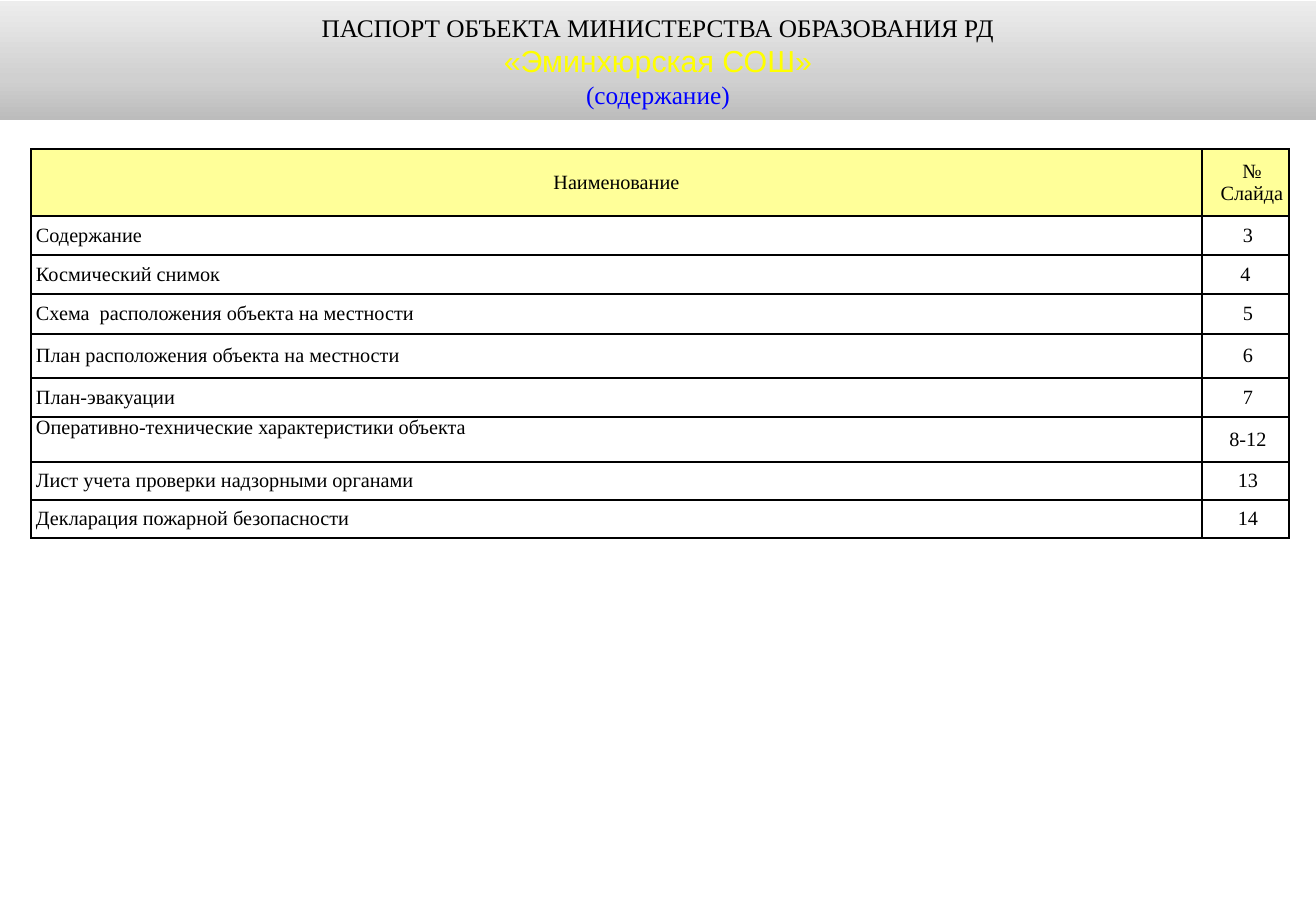
import copy

import lxml.etree
import pptx
import pptx.dml.color
import pptx.enum.text
import pptx.oxml.ns
import pptx.util

PX = 7526  # EMU in one px
SERIF = "Times New Roman"
ALIGN = pptx.enum.text.PP_ALIGN
ANCHOR = pptx.enum.text.MSO_ANCHOR
qn = pptx.oxml.ns.qn


def rgb(code):
    return pptx.dml.color.RGBColor.from_string(code)


def write(frame, text, size=12, font=SERIF, color="000000", align=ALIGN.CENTER):
    """Fill the empty first paragraph, or add one below."""
    para = frame.paragraphs[0] if not frame.text else frame.add_paragraph()
    para.alignment = align
    run = para.add_run()
    run.text = text
    run.font.size = pptx.util.Pt(size)
    run.font.name = font
    run.font.color.rgb = rgb(color)


deck = pptx.Presentation()
deck.slide_width = 1316 * PX
deck.slide_height = 911 * PX
slide = deck.slides.add_slide(deck.slide_layouts[5])

# Title band
title = slide.shapes.title
title.left, title.top = 0, 1 * PX
title.width, title.height = 1316 * PX, 119 * PX
title.fill.gradient()
title.fill.gradient_angle = 90
stops = title.element.spPr.find(".//" + qn("a:gsLst"))
stops.append(copy.deepcopy(stops[0]))
shades = [(0, "BCBCBC"), (0.35, "D0D0D0"), (1, "EDEDED")]
for stop, (place, shade) in zip(title.fill.gradient_stops, shades):
    stop.position = place
    stop.color.rgb = rgb(shade)

frame = title.text_frame
frame.word_wrap = True
frame.auto_size = pptx.enum.text.MSO_AUTO_SIZE.NONE
frame.vertical_anchor = ANCHOR.MIDDLE
write(frame, "ПАСПОРТ ОБЪЕКТА МИНИСТЕРСТВА ОБРАЗОВАНИЯ РД", size=15)
write(frame, "«Эминхюрская СОШ»", size=18, font="Arial", color="FFFF00")
write(frame, "(содержание)", size=15, color="0000FF")

# Contents table: name, slide number, row height
rows = [
    ("Наименование", "№\nСлайда", 67),
    ("Содержание", "3", 39),
    ("Космический снимок", "4", 39),
    ("Схема  расположения объекта на местности", "5", 40),
    ("План расположения объекта на местности", "6", 44),
    ("План-эвакуации", "7", 39),
    ("Оперативно-технические характеристики объекта", "8-12", 45),
    ("Лист учета проверки надзорными органами", "13", 38),
    ("Декларация пожарной безопасности", "14", 38),
]
widths = [1171, 87]
high = sum(row[2] for row in rows)
table = slide.shapes.add_table(
    len(rows), 2, 31 * PX, 149 * PX, sum(widths) * PX, high * PX
).table
table.first_row = table.horz_banding = False
for col, width in zip(table.columns, widths):
    col.width = width * PX

for r, (name, number, height) in enumerate(rows):
    table.rows[r].height = height * PX
    for c, text in enumerate((name, number)):
        cell = table.cell(r, c)
        cell.margin_left = cell.margin_right = 0
        cell.margin_top = cell.margin_bottom = 0
        cell.vertical_anchor = ANCHOR.MIDDLE
        props = cell._tc.get_or_add_tcPr()
        for side in ("a:lnL", "a:lnR", "a:lnT", "a:lnB"):
            line = lxml.etree.SubElement(props, qn(side), w=str(pptx.util.Pt(1)))
            solid = lxml.etree.SubElement(line, qn("a:solidFill"))
            lxml.etree.SubElement(solid, qn("a:srgbClr"), val="000000")
        if r == 0:
            cell.fill.solid()
            cell.fill.fore_color.rgb = rgb("FFFF99")
            cell.margin_left = 13 * c * PX
        else:
            cell.fill.background()
            cell.margin_left = 0 if text == "4" else 5 * PX
        align = ALIGN.LEFT if r and c == 0 else ALIGN.CENTER
        for part in text.split("\n"):
            write(cell.text_frame, part, align=align)

table.cell(6, 0).vertical_anchor = ANCHOR.TOP

deck.save("out.pptx")
